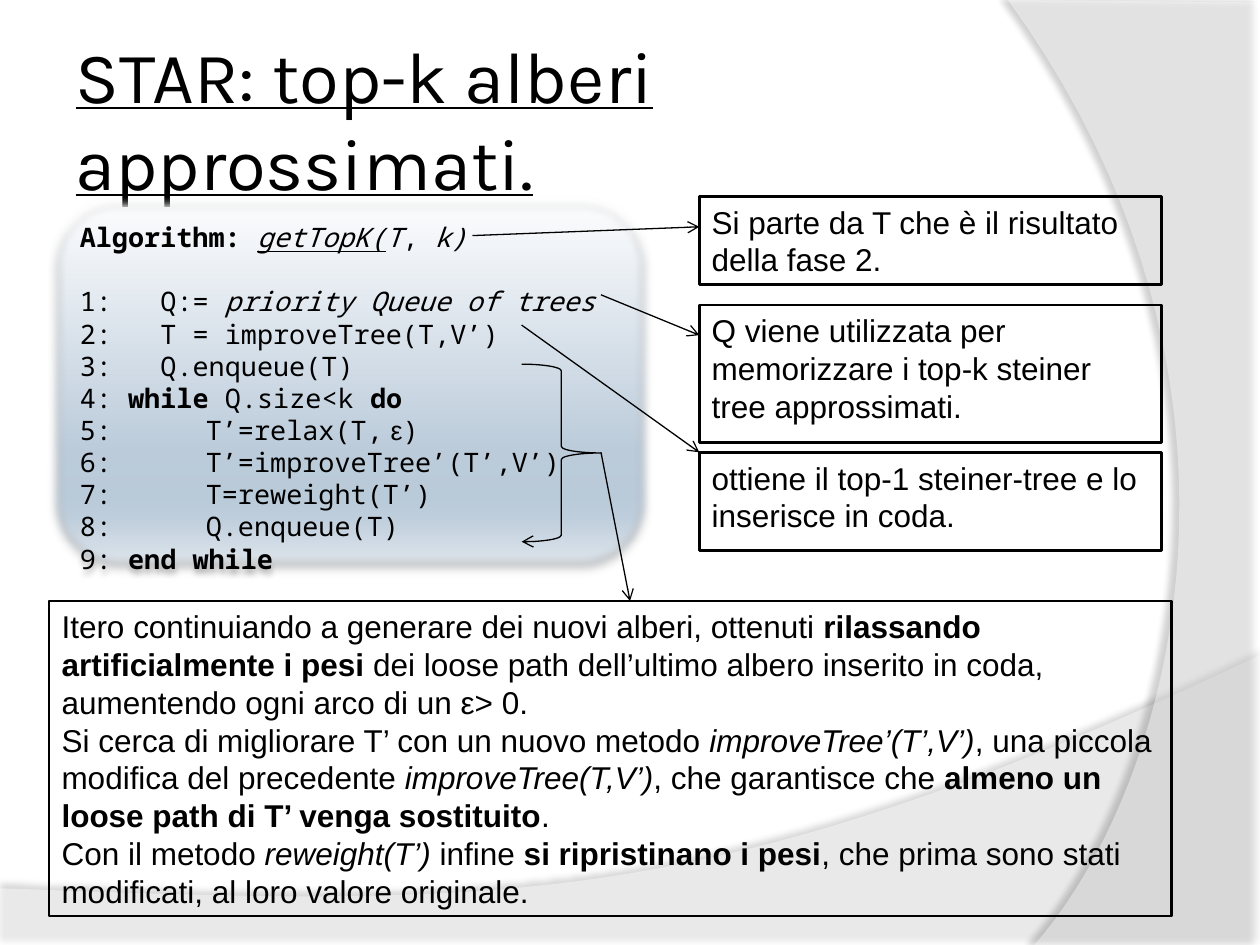
"""Build the slide on the STAR top-k approximate trees algorithm."""
from dataclasses import dataclass

from lxml import etree
from pptx import Presentation
from pptx.dml.color import RGBColor
from pptx.enum.shapes import MSO_CONNECTOR, MSO_SHAPE
from pptx.enum.text import MSO_ANCHOR, MSO_AUTO_SIZE, PP_ALIGN
from pptx.oxml.ns import qn
from pptx.util import Pt

PX = 9144
BLACK = RGBColor(0x00, 0x00, 0x00)
WHITE = RGBColor(0xFF, 0xFF, 0xFF)
GRADIENT = (
    (0, RGBColor(0xFE, 0xFE, 0xFF)),
    (68, RGBColor(0xBB, 0xCB, 0xDA)),
    (81, RGBColor(0xB9, 0xCA, 0xD9)),
    (86, RGBColor(0xBF, 0xCE, 0xDC)),
    (100, RGBColor(0xE3, 0xE9, 0xEF)),
)
TITLE_FONT, BODY_FONT, CODE_FONT = "Karla", "Arial", "Noto Sans Mono"
RECTANGLE = MSO_SHAPE.RECTANGLE
ROUNDED = MSO_SHAPE.ROUNDED_RECTANGLE
RIGHT_BRACE = MSO_SHAPE.RIGHT_BRACE
STRAIGHT = MSO_CONNECTOR.STRAIGHT
LEFT = PP_ALIGN.LEFT
TOP, MIDDLE = MSO_ANCHOR.TOP, MSO_ANCHOR.MIDDLE
NO_AUTOFIT = MSO_AUTO_SIZE.NONE


@dataclass(frozen=True)
class Box:
    left: int
    top: int
    width: int
    height: int

    def emu(self) -> tuple:
        return tuple(value * PX for value in (self.left, self.top, self.width, self.height))


@dataclass(frozen=True)
class Text:
    text: str
    bold: bool = False
    italic: bool = False
    underline: bool = False
    font: str = ""


@dataclass(frozen=True)
class Shadow:
    alpha: int
    blur: float
    distance: float
    angle: int


@dataclass(frozen=True)
class Note:
    box: Box
    paragraphs: tuple


@dataclass(frozen=True)
class Arrow:
    start: tuple
    end: tuple


CODE_BOX = Box(39, 156, 477, 297)
BRACE_BOX = Box(414, 289, 63, 141)
TITLE_BOX = Box(55, 31, 817, 125)
CODE = (
    (Text("Algorithm: ", bold=True), Text("getTopK(", italic=True, underline=True),
     Text("T", italic=True), Text(", "), Text("k)", italic=True)),
    (Text("1:\tQ:= "), Text("priority Queue of trees", italic=True)),
    (Text("2:\tT = improveTree(T,V’)"),),
    (Text("3:\tQ.enqueue(T)"),),
    (Text("4: "), Text("while ", bold=True), Text("Q.size<k "), Text("do", bold=True)),
    (Text("5: \tT’=relax(T,"), Text(" ε", font=BODY_FONT), Text(")")),
    (Text("6: \tT’=improveTree’(T’,V’)"),),
    (Text("7: \tT=reweight(T’)"),),
    (Text("8: \tQ.enqueue(T)"),),
    (Text("9: "), Text("end while", bold=True)),
)
CODE_INDENTS = {1: 64, 2: 64, 3: 64, 5: 100, 6: 100, 7: 100, 8: 100}
NOTES = (
    Note(Box(555, 156, 367, 70), ((Text("Si parte da T che è il risultato della fase 2."),),)),
    Note(Box(555, 242, 367, 109), (
        (Text("Q viene utilizzata per memorizzare i top-k steiner tree approssimati."),),)),
    Note(Box(555, 359, 367, 78), (
        (Text("ottiene il top-1 steiner-tree e lo inserisce in coda."),),)),
    Note(Box(39, 477, 891, 250), (
        (Text("Itero continuiando a generare dei nuovi alberi, ottenuti "),
         Text("rilassando artificialmente i pesi", bold=True),
         Text(" dei loose path dell’ultimo albero inserito in coda, "
              "aumentendo ogni arco di un ε> 0.")),
        (Text("Si cerca di migliorare T’ con un nuovo metodo "),
         Text("improveTree’(T’,V’)", italic=True),
         Text(", una piccola modifica del precedente "),
         Text("improveTree(T,V’)", italic=True),
         Text(", che garantisce che "),
         Text("almeno un loose path di T’ venga sostituito", bold=True), Text(".")),
        (Text("Con il metodo "), Text("reweight(T’)", italic=True), Text(" infine "),
         Text("si ripristinano i pesi", bold=True),
         Text(", che prima sono stati modificati, al loro valore originale.")),
    )),
)
ARROWS = (
    Arrow((375, 187), (555, 180)),
    Arrow((477, 234), (555, 266)),
    Arrow((477, 359), (500, 477)),
    Arrow((414, 258), (555, 359)),
)


def add_child(parent, tag: str, **attributes):
    return etree.SubElement(parent, qn(tag), {key: str(value) for key, value in attributes.items()})


def add_shadow(shape, shadow: Shadow) -> None:
    shape.shadow.inherit = False
    effects = shape._element.spPr.find(qn("a:effectLst"))
    outer = add_child(effects, "a:outerShdw", blurRad=Pt(shadow.blur), dist=Pt(shadow.distance),
                      dir=shadow.angle * 60000, algn="ctr", rotWithShape=0)
    color = add_child(outer, "a:srgbClr", val=BLACK)
    add_child(color, "a:alpha", val=shadow.alpha * 1000)


def curve(start: tuple, first: tuple, second: tuple, end: tuple, steps: int = 40) -> list:
    points = []
    for step in range(1, steps + 1):
        t = step / steps
        weights = ((1 - t) ** 3, 3 * t * (1 - t) ** 2, 3 * t * t * (1 - t), t ** 3)
        points.append(tuple(
            round(PX * sum(weight * value for weight, value in zip(weights, axis)))
            for axis in zip(start, first, second, end)))
    return points


def add_wave(slide, corners: tuple, controls: tuple, end: tuple, alpha: int,
             shadow: Shadow) -> None:
    outline = [(x * PX, y * PX) for x, y in corners]
    builder = slide.shapes.build_freeform(*outline[0])
    builder.add_line_segments(outline[1:] + curve(corners[-1], *controls, end), close=True)
    shape = builder.convert_to_shape()
    shape.fill.solid()
    shape.fill.fore_color.rgb = WHITE
    shape.line.fill.background()
    color = shape._element.spPr.find(qn("a:solidFill")).find(qn("a:srgbClr"))
    add_child(color, "a:alpha", val=alpha * 1000)
    add_shadow(shape, shadow)


def write(frame, paragraphs: tuple, font: str, size: float) -> None:
    frame.word_wrap = True
    for index, texts in enumerate(paragraphs):
        paragraph = frame.paragraphs[0] if index == 0 else frame.add_paragraph()
        paragraph.alignment = LEFT
        for item in texts:
            run = paragraph.add_run()
            run.text = item.text
            run.font.name = item.font or font
            run.font.size = Pt(size)
            run.font.bold = item.bold
            run.font.italic = item.italic
            run.font.underline = item.underline
            run.font.color.rgb = BLACK


def add_title(slide) -> None:
    title = slide.shapes.title
    title.left, title.top, title.width, title.height = TITLE_BOX.emu()
    frame = title.text_frame
    frame.auto_size = NO_AUTOFIT
    frame.vertical_anchor = MIDDLE
    frame.margin_left = frame.margin_right = frame.margin_top = frame.margin_bottom = 5 * PX
    write(frame, ((Text("STAR: top-k alberi approssimati.", underline=True),),), TITLE_FONT, 41.4)
    slide.shapes._spTree.append(title._element)


def add_code(slide) -> None:
    shape = slide.shapes.add_shape(ROUNDED, *CODE_BOX.emu())
    shape.fill.gradient()
    shape.fill.gradient_angle = 270
    stops = shape._element.spPr.find(qn("a:gradFill")).find(qn("a:gsLst"))
    for stop in list(stops):
        stops.remove(stop)
    for position, color in GRADIENT:
        add_child(add_child(stops, "a:gs", pos=position * 1000), "a:srgbClr", val=color)
    shape.line.fill.background()
    add_shadow(shape, Shadow(32, 3.5, 2.2, 90))
    add_child(shape._element.spPr.find(qn("a:effectLst")), "a:softEdge", rad=Pt(5))
    frame = shape.text_frame
    frame.vertical_anchor = TOP
    write(frame, CODE, CODE_FONT, 15.3)
    frame.paragraphs[0].space_after = Pt(18.3)
    for index, indent in CODE_INDENTS.items():
        properties = frame.paragraphs[index]._p.get_or_add_pPr()
        add_child(add_child(properties, "a:tabLst"), "a:tab", pos=indent * PX, algn="l")


def add_outline(slide, kind, box: Box, width: float):
    shape = slide.shapes.add_shape(kind, *box.emu())
    shape.fill.background()
    shape.line.color.rgb = BLACK
    shape.line.width = Pt(width)
    shape.shadow.inherit = False
    return shape


def add_note(slide, note: Note) -> None:
    frame = add_outline(slide, RECTANGLE, note.box, 1.5).text_frame
    frame.vertical_anchor = TOP
    write(frame, note.paragraphs, BODY_FONT, 18)


def add_arrowhead(shape) -> None:
    add_child(shape._element.spPr.find(qn("a:ln")), "a:tailEnd", type="arrow")


def add_arrow(slide, arrow: Arrow) -> None:
    ends = (value * PX for value in arrow.start + arrow.end)
    connector = slide.shapes.add_connector(STRAIGHT, *ends)
    connector.line.color.rgb = BLACK
    connector.line.width = Pt(0.75)
    add_arrowhead(connector)
    add_child(connector._element.spPr, "a:effectLst")


def main() -> None:
    presentation = Presentation()
    presentation.slide_width, presentation.slide_height = 1000 * PX, 750 * PX
    slide = presentation.slides.add_slide(presentation.slide_layouts[5])
    add_wave(slide, ((0, 705), (0, 751), (1000, 751), (1000, 520)),
             ((559, 729), (391, 719)), (0, 705), 45, Shadow(35, 4, 3.5, 270))
    add_wave(slide, ((1000, 2), (1000, 750), (821, 750)),
             ((935, 619), (1018, 300)), (800, 0), 40, Shadow(45, 4, 4, 180))
    add_title(slide)
    add_code(slide)
    for note in NOTES:
        add_note(slide, note)
    add_arrowhead(add_outline(slide, RIGHT_BRACE, BRACE_BOX, 0.75))
    for arrow in ARROWS:
        add_arrow(slide, arrow)
    presentation.save("out.pptx")


if __name__ == "__main__":
    main()
